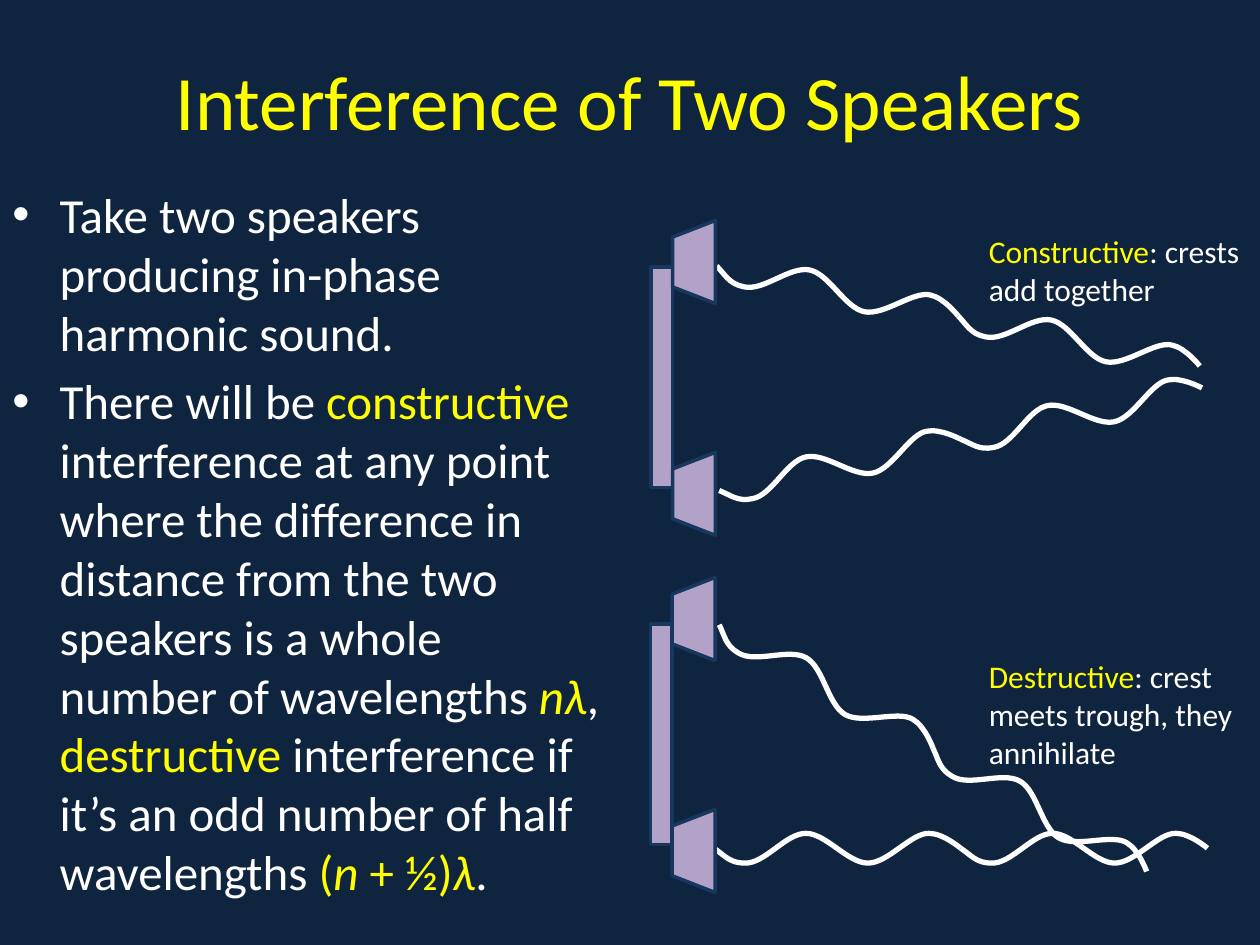
from pptx import Presentation
from pptx.dml.color import RGBColor
from pptx.enum.shapes import MSO_SHAPE
from pptx.enum.text import MSO_ANCHOR, PP_ALIGN
from pptx.oxml.ns import qn
from pptx.util import Pt
from lxml.etree import SubElement
from math import cos, radians, sin

NAVY, YELLOW, WHITE = "0F243E", "FFFF00", "FFFFFF"
LILAC, EDGE = "B3A2C7", "17375E"
WAVE_LENGTH = 141
WAVE_POINTS = [
    (6, 4), (9, 8.5), (17.5, 8.5),
    (29, 9), (41, -8.5), (52.5, -8.5),
    (64, -8.5), (76.5, 8.5), (88, 8.5),
    (99.5, 8.5), (113, -9), (123, -8.5),
    (131, -8.5), (141, 0), (141, 0),
]


def color(hex_text):
    """Turn a hex string into a colour."""
    return RGBColor.from_string(hex_text)


def add_text(page, left, top, width, height, paragraphs, size):
    """Add a wrapped text box; each paragraph is a list of (text, colour, italic)."""
    box = page.shapes.add_textbox(Pt(left), Pt(top), Pt(width), Pt(height))
    frame = box.text_frame
    frame.word_wrap = True
    for index, spans in enumerate(paragraphs):
        para = frame.add_paragraph() if index else frame.paragraphs[0]
        para.font.name = "Calibri"
        para.font.size = Pt(size)
        for text, hex_text, italic in spans:
            span = para.add_run()
            span.text = text
            span.font.color.rgb = color(hex_text)
            if italic:
                span.font.italic = True
    return frame


def add_bullet(para, indent, space):
    """Give a paragraph a round bullet with a hanging indent."""
    para.space_before = Pt(space)
    properties = para._p.get_or_add_pPr()
    properties.set("marL", str(Pt(indent)))
    properties.set("indent", str(-Pt(indent)))
    SubElement(properties, qn("a:buFont")).set("typeface", "Arial")
    SubElement(properties, qn("a:buChar")).set("char", "•")


def add_part(page, kind, left, top, width, height, rotation=0):
    """Add one lilac part of a speaker stand."""
    part = page.shapes.add_shape(kind, Pt(left), Pt(top), Pt(width), Pt(height))
    part.rotation = rotation
    part.shadow.inherit = False
    part.fill.solid()
    part.fill.fore_color.rgb = color(LILAC)
    part.line.color.rgb = color(EDGE)
    part.line.width = Pt(2)


def add_speakers(page, left, top):
    """Add a stand with a speaker cone at each end."""
    add_part(page, MSO_SHAPE.RECTANGLE, left, top, 12.25, 126)
    for cone_top in (top - 15, top + 117.5):
        add_part(page, MSO_SHAPE.FLOWCHART_MANUAL_OPERATION,
                 left + 0.8, cone_top, 47.5, 24.5, 90)


def bend(shape):
    """Turn each three straight segments of an outline into one cubic curve."""
    segments = list(shape._element.iter(qn("a:lnTo")))
    outline = segments[0].getparent()
    for first in range(0, len(segments), 3):
        curve = SubElement(outline, qn("a:cubicBezTo"))
        for segment in segments[first:first + 3]:
            curve.append(segment[0])
            outline.remove(segment)


def add_wave(page, left, top, angle):
    """Add two wave sections end to end, starting at a point and running at an angle."""
    run = WAVE_LENGTH * cos(radians(angle))
    rise = WAVE_LENGTH * sin(radians(angle))
    for section in (0.5, 1.5):
        start_x = left + section * run - WAVE_LENGTH / 2
        start_y = top + section * rise
        builder = page.shapes.build_freeform(Pt(start_x), Pt(start_y))
        builder.add_line_segments(
            [(Pt(start_x + x), Pt(start_y + y)) for x, y in WAVE_POINTS], close=False)
        wave = builder.convert_to_shape()
        bend(wave)
        wave.rotation = angle
        wave.shadow.inherit = False
        wave.fill.background()
        wave.line.color.rgb = color(WHITE)
        wave.line.width = Pt(3)


def main():
    """Build the slide and save it."""
    deck = Presentation()
    deck.slide_width, deck.slide_height = Pt(720), Pt(540)
    page = deck.slides.add_slide(deck.slide_layouts[6])
    page.background.fill.solid()
    page.background.fill.fore_color.rgb = color(NAVY)

    title = add_text(page, 36, 12, 648, 90,
                     [[("Interference of Two Speakers", YELLOW, False)]], 44)
    title.vertical_anchor = MSO_ANCHOR.MIDDLE
    title.paragraphs[0].alignment = PP_ALIGN.CENTER

    body = add_text(page, 0, 102, 354, 402, [
        [("Take two speakers producing in-phase harmonic sound.", WHITE, False)],
        [("There will be ", WHITE, False),
         ("constructive", YELLOW, False),
         (" interference at any point where the difference in distance from "
          "the two speakers is a whole number of wavelengths ", WHITE, False),
         ("nλ", YELLOW, True),
         (", ", WHITE, False),
         ("destructive", YELLOW, False),
         (" interference if it’s an odd number of half wavelengths ", WHITE, False),
         ("(", YELLOW, False),
         ("n", YELLOW, True),
         (" + ½)", YELLOW, False),
         ("λ", YELLOW, True),
         (".", WHITE, False)],
    ], 28)
    for para in body.paragraphs:
        add_bullet(para, 27, 5.6)

    for left, top, angle in ((409.5, 152, 11.7), (411, 280.3, -12),
                             (411, 357, 30), (408, 484.7, 0)):
        add_wave(page, left, top, angle)
    for left, top in ((372, 152.5), (371.8, 356.5)):
        add_speakers(page, left, top)
    for top, width, height, word, rest in (
            (129, 174, 51, "Constructive", ": crests add together"),
            (372, 180, 73, "Destructive", ": crest meets trough, they annihilate")):
        add_text(page, 558, top, width, height,
                 [[(word, YELLOW, False), (rest, WHITE, False)]], 18)
    deck.save("out.pptx")


if __name__ == "__main__":
    main()
